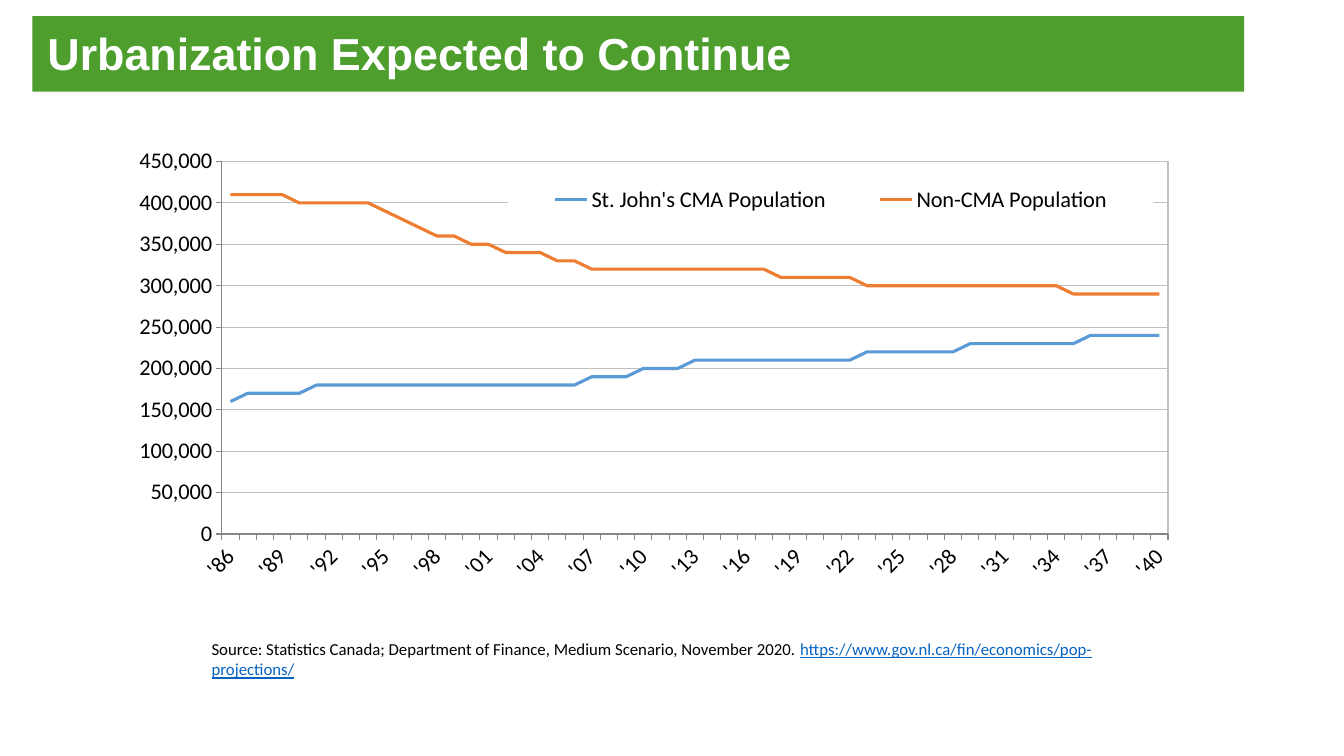
from dataclasses import dataclass

from lxml.etree import fromstring
from pptx import Presentation
from pptx.chart.data import CategoryChartData
from pptx.dml.color import RGBColor
from pptx.enum.chart import XL_CHART_TYPE, XL_LEGEND_POSITION, XL_TICK_MARK
from pptx.enum.shapes import MSO_SHAPE
from pptx.enum.text import MSO_ANCHOR, MSO_AUTO_SIZE, PP_ALIGN
from pptx.oxml.ns import nsdecls, qn
from pptx.util import Inches, Pt

# Content
TITLE = "Urbanization Expected to Continue"
SOURCE = "Source: Statistics Canada; Department of Finance, Medium Scenario, November 2020. "
LINK = "https://www.gov.nl.ca/fin/economics/pop-projections/"
YEARS = range(1986, 2041)
# Each series is a list of (population, number of years it holds)
SERIES = {
    "St. John's CMA Population": [
        (160000, 1), (170000, 4), (180000, 16), (190000, 3), (200000, 3),
        (210000, 10), (220000, 6), (230000, 7), (240000, 5)],
    "Non-CMA Population": [
        (410000, 4), (400000, 5), (390000, 1), (380000, 1), (370000, 1),
        (360000, 2), (350000, 2), (340000, 3), (330000, 2), (320000, 11),
        (310000, 5), (300000, 12), (290000, 6)],
}


@dataclass
class Theme:
    green: str = "4E9E2E"
    white: str = "FFFFFF"
    black: str = "000000"
    link: str = "0563C1"
    grid: str = "BFBFBF"
    axis: str = "868686"
    lines: tuple = ("5B9BD5", "ED7D31")
    head: str = "Arial"
    body: str = "Calibri"
    big: int = 32
    label: int = 16
    small: int = 12


theme = Theme()


def style(font, size, color, face=theme.body, bold=False, under=False):
    font.size, font.name, font.bold, font.underline = Pt(size), face, bold, under
    font.color.rgb = RGBColor.from_string(color)


def write(par, text, **form):
    run = par.add_run()
    run.text = text
    style(run.font, **form)


def stroke(line, color, width):
    line.color.rgb = RGBColor.from_string(color)
    line.width = Pt(width)


def layout(x, y, w, h, inner=False):
    target = '<c:layoutTarget val="inner"/>' if inner else ""
    sizes = "".join(f'<c:{k} val="{v}"/>' for k, v in zip("xywh", (x, y, w, h)))
    return fromstring(
        f'<c:layout {nsdecls("c")}><c:manualLayout>{target}'
        f'<c:xMode val="edge"/><c:yMode val="edge"/>{sizes}'
        '</c:manualLayout></c:layout>')


def drop(parent, tag):
    for node in parent.findall(qn(tag)):
        parent.remove(node)


def draw_chart(slide):
    data = CategoryChartData(number_format="#,##0")
    data.categories = [f"'{year % 100:02d}" for year in YEARS]
    for name, spans in SERIES.items():
        data.add_series(name, [v for v, count in spans for _ in range(count)])
    chart = slide.shapes.add_chart(
        XL_CHART_TYPE.LINE, Inches(0.81), Inches(1.42),
        Inches(11.04), Inches(5.22), data).chart
    chart.has_title = False
    style(chart.font, theme.label, theme.black)

    # Lines
    for line, color in zip(chart.plots[0].series, theme.lines):
        line.smooth = False
        stroke(line.format.line, color, 2.25)

    # Axes
    years, people = chart.category_axis, chart.value_axis
    for axis in (years, people):
        axis.major_tick_mark = XL_TICK_MARK.OUTSIDE
        axis.minor_tick_mark = XL_TICK_MARK.NONE
        stroke(axis.format.line, theme.axis, 0.75)
        style(axis.tick_labels.font, theme.label, theme.black)
    people.minimum_scale, people.maximum_scale = 0, 450000
    people.major_unit = 50000
    people.tick_labels.number_format = "#,##0"
    people.tick_labels.number_format_is_linked = False
    people.has_major_gridlines = True
    stroke(people.major_gridlines.format.line, theme.grid, 0.75)

    # Slanted label on every third year, tick on every year
    node = years._element
    node.find(qn("c:txPr")).find(qn("a:bodyPr")).set("rot", "-2700000")
    for tag, step in (("tickLblSkip", 3), ("tickMarkSkip", 1)):
        node.find(qn("c:noMultiLvlLbl")).addprevious(
            fromstring(f'<c:{tag} {nsdecls("c")} val="{step}"/>'))

    # Plot area and its frame
    area = chart._chartSpace.chart.plotArea
    drop(area, "c:layout")
    area.insert(0, layout(0.126, 0.035, 0.85, 0.708, inner=True))
    area.append(fromstring(
        f'<c:spPr {nsdecls("c", "a")}><a:noFill/><a:ln w="9525"><a:solidFill>'
        f'<a:srgbClr val="{theme.grid}"/></a:solidFill></a:ln></c:spPr>'))

    # White legend over the plot
    chart.has_legend = True
    legend = chart.legend
    legend.position = XL_LEGEND_POSITION.BOTTOM
    legend.include_in_layout = False
    style(legend.font, theme.label, theme.black)
    drop(legend._element, "c:layout")
    cover = legend._element.find(qn("c:overlay"))
    cover.addprevious(layout(0.383, 0.07, 0.58, 0.075))
    cover.addnext(fromstring(
        f'<c:spPr {nsdecls("c", "a")}><a:solidFill><a:srgbClr val="{theme.white}"/>'
        '</a:solidFill><a:ln><a:noFill/></a:ln></c:spPr>'))


def draw_source(slide):
    frame = slide.shapes.add_textbox(
        Inches(2), Inches(6.29), Inches(9.2), Inches(0.5)).text_frame
    frame.word_wrap = True
    par = frame.paragraphs[0]
    write(par, SOURCE, size=theme.small, color=theme.black)
    write(par, LINK, size=theme.small, color=theme.link, under=True)


def draw_title(slide):
    band = slide.shapes.add_shape(
        MSO_SHAPE.RECTANGLE, Inches(0.32), Inches(0.16), Inches(12.02), Inches(0.75))
    band.shadow.inherit = False
    band.fill.solid()
    band.fill.fore_color.rgb = RGBColor.from_string(theme.green)
    band.line.fill.background()

    title = slide.shapes.title
    title.left, title.top = Inches(0.37), Inches(0.2)
    title.width, title.height = Inches(10.27), Inches(0.64)
    frame = title.text_frame
    frame.word_wrap = True
    frame.auto_size = MSO_AUTO_SIZE.NONE
    frame.vertical_anchor = MSO_ANCHOR.MIDDLE
    par = frame.paragraphs[0]
    par.alignment = PP_ALIGN.LEFT
    write(par, TITLE, size=theme.big, color=theme.white, face=theme.head, bold=True)
    band._element.addnext(title._element)  # title text in front of the band


def main():
    deck = Presentation()
    deck.slide_width, deck.slide_height = Inches(13.33), Inches(7.5)
    slide = deck.slides.add_slide(deck.slide_layouts[5])
    draw_chart(slide)
    draw_source(slide)
    draw_title(slide)
    deck.save("out.pptx")


if __name__ == "__main__":
    main()
